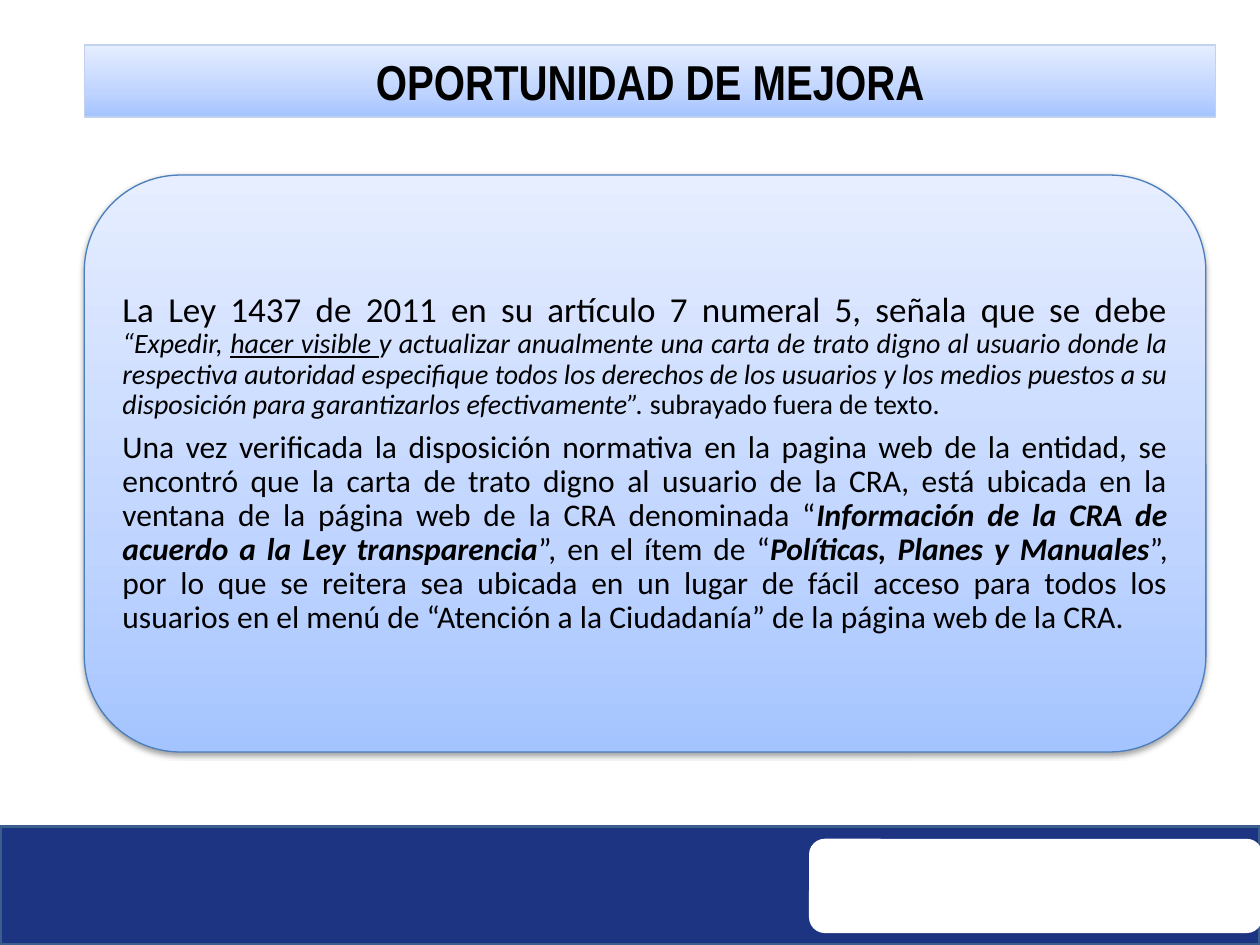
from copy import deepcopy

from lxml.etree import SubElement
from pptx import Presentation
from pptx.dml.color import RGBColor
from pptx.enum.shapes import MSO_SHAPE as Shape
from pptx.enum.text import MSO_ANCHOR as Anchor, MSO_AUTO_SIZE as AutoSize, PP_ALIGN as Align
from pptx.oxml.ns import qn
from pptx.util import Cm, Pt

COLORS = {
    "band": "1C3481",
    "band_line": "3A5F8C",
    "plate": "FFFFFF",
    "title_line": "C2D1ED",
    "panel_line": "4B7EBC",
    "text": "000000",
    "shadow": "000000",
}
GRADIENT = [(0, "A4C4FF"), (0.35, "BFD4FF"), (1, "E6EEFF")]

# Each paragraph is a list of (text, size, styles)
PARAGRAPHS = [
    [
        ("La Ley 1437 de 2011 en su artículo 7 numeral 5, señala que se debe ", 20, ""),
        ("“Expedir, ", 16, "i"),
        ("hacer visible ", 16, "iu"),
        ("y actualizar anualmente una carta de trato digno al usuario donde la "
         "respectiva autoridad especifique todos los derechos de los usuarios y los "
         "medios puestos a su disposición para garantizarlos efectivamente”. ", 16, "i"),
        ("subrayado fuera de texto.", 16, ""),
    ],
    [
        ("Una vez verificada la disposición normativa en la pagina web de la entidad, "
         "se encontró que la carta de trato digno al usuario de la CRA, está ubicada "
         "en la ventana de la página web de la CRA denominada “", 18, ""),
        ("Información de la CRA de acuerdo a la Ley transparencia", 18, "bi"),
        ("”, en el ítem de “", 18, ""),
        ("Políticas, Planes y Manuales", 18, "bi"),
        ("”, por lo que se reitera sea ubicada en un lugar de fácil acceso para todos "
         "los usuarios en el menú de “Atención a la Ciudadanía” de la página web de "
         "la CRA.", 18, ""),
    ],
]


def color(name):
    return RGBColor.from_string(COLORS[name])


def add_block(page, kind, box, fill=None, line=None, line_width=0.75):
    """Add a shape without shadow; with no fill name it gets the blue gradient."""
    block = page.shapes.add_shape(kind, *map(Cm, box))
    block.shadow.inherit = False
    if fill:
        block.fill.solid()
        block.fill.fore_color.rgb = color(fill)
    else:
        fill_gradient(block)
    if line:
        block.line.color.rgb = color(line)
        block.line.width = Pt(line_width)
    else:
        block.line.fill.background()
    return block


def fill_gradient(block):
    block.fill.gradient()
    block.fill.gradient_angle = 90
    stop_list = block._element.spPr.find(".//" + qn("a:gsLst"))
    stop_list.append(deepcopy(stop_list[-1]))
    for stop, (position, value) in zip(block.fill.gradient_stops, GRADIENT):
        stop.position = position
        stop.color.rgb = RGBColor.from_string(value)


def add_soft_shadow(block):
    effects = block._element.spPr.find(qn("a:effectLst"))
    shadow = SubElement(effects, qn("a:outerShdw"), blurRad=str(Pt(3.1)),
                        dist=str(Pt(1.6)), dir="5400000", rotWithShape="0")
    tint = SubElement(shadow, qn("a:srgbClr"), val=COLORS["shadow"])
    SubElement(tint, qn("a:alpha"), val="38000")


def style_span(span, font_name, size, styles=""):
    font = span.font
    font.name = font_name
    font.size = Pt(size)
    font.color.rgb = color("text")
    font.bold = "b" in styles
    font.italic = "i" in styles
    font.underline = "u" in styles


def add_footer(page, left, top, width, height):
    add_block(page, Shape.RECTANGLE, (left, top, width, height), "band", "band_line", 2)
    plate_width = 9.14
    add_block(page, Shape.ROUNDED_RECTANGLE,
              (left + width - plate_width + 0.05, top + 0.25, plate_width, 1.9), "plate")


def add_title(page, left, top, width, height):
    title = add_block(page, Shape.RECTANGLE, (left, top, width, height), line="title_line")
    frame = title.text_frame
    frame.text = "OPORTUNIDAD DE MEJORA"
    frame.word_wrap = True
    frame.auto_size = AutoSize.SHAPE_TO_FIT_TEXT
    frame.vertical_anchor = Anchor.TOP
    para = frame.paragraphs[0]
    para.alignment = Align.CENTER
    style_span(para.runs[0], "Arial Narrow", 28, "b")


def add_panel(page, left, top, width, height, inset=0.57):
    panel = add_block(page, Shape.ROUNDED_RECTANGLE, (left, top, width, height),
                      line="panel_line")
    add_soft_shadow(panel)

    box = page.shapes.add_textbox(Cm(left + inset), Cm(top + inset),
                                  Cm(width - 2 * inset), Cm(height - 2 * inset))
    frame = box.text_frame
    frame.word_wrap = True
    frame.vertical_anchor = Anchor.MIDDLE
    frame.margin_left = frame.margin_right = Cm(0.2)
    frame.margin_top = frame.margin_bottom = Cm(0.2)
    for index, pieces in enumerate(PARAGRAPHS):
        para = frame.add_paragraph() if index else frame.paragraphs[0]
        para.alignment = Align.JUSTIFY
        para.line_spacing = 0.9
        para.space_after = Pt(6)
        for text, size, styles in pieces:
            span = para.add_run()
            span.text = text
            style_span(span, "Calibri", size, styles)


def main():
    deck = Presentation()
    deck.slide_width, deck.slide_height = Cm(25.4), Cm(19.05)
    page = deck.slides.add_slide(deck.slide_layouts[6])
    add_footer(page, 0, 16.66, 25.4, 2.39)
    add_title(page, 1.7, 0.91, 22.81, 1.45)
    add_panel(page, 1.7, 3.53, 22.61, 11.63)
    deck.save("out.pptx")


if __name__ == "__main__":
    main()
